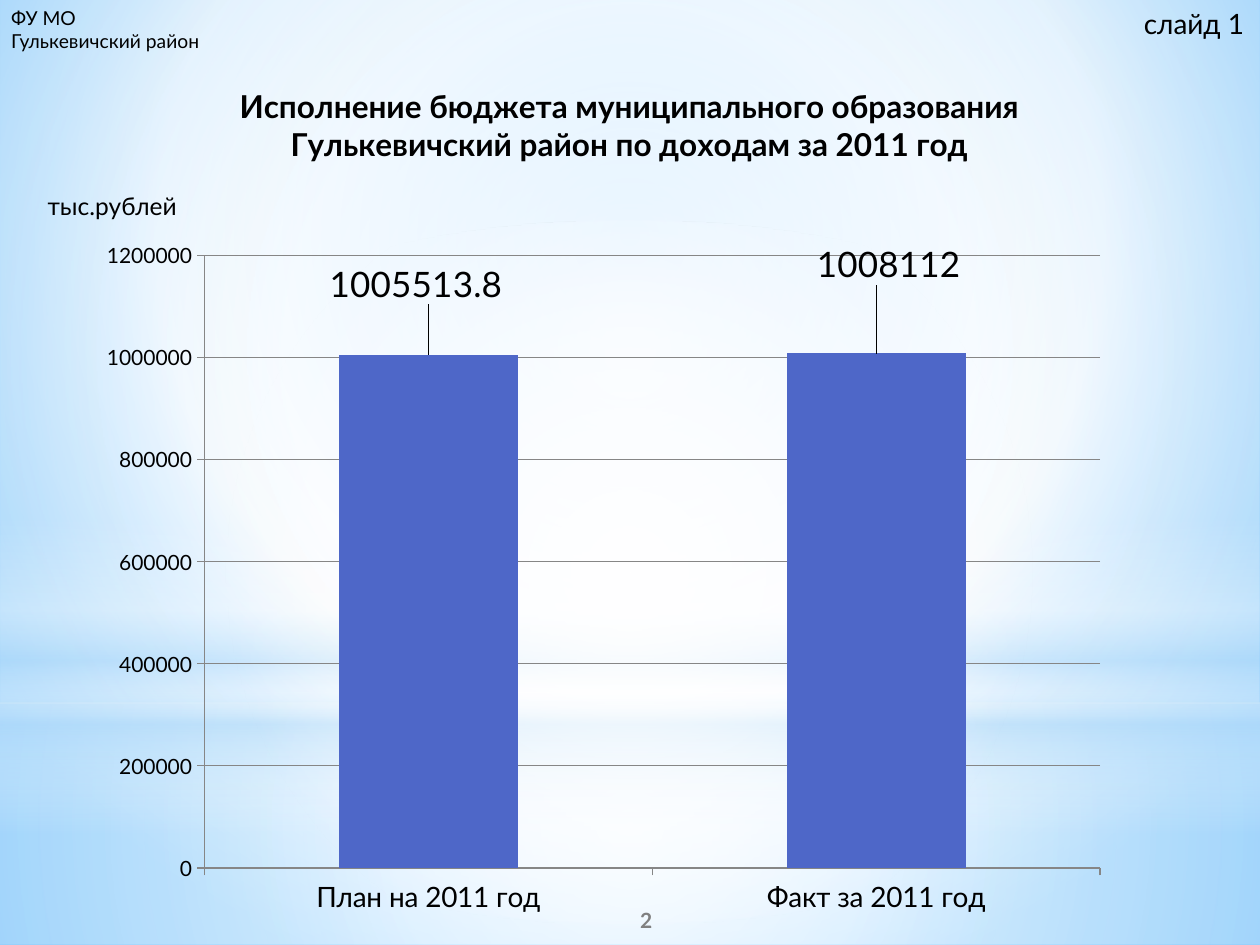
import pptx
import pptx.util
import pptx.oxml
import pptx.oxml.ns
import pptx.dml.color
import pptx.chart.data
import pptx.enum.chart
import pptx.enum.shapes
import pptx.enum.text

Inches = pptx.util.Inches
Pt = pptx.util.Pt
Align = pptx.enum.text.PP_ALIGN
Anchor = pptx.enum.text.MSO_ANCHOR
Kind = pptx.enum.shapes.MSO_SHAPE
qn = pptx.oxml.ns.qn
FONT = "Lato"
GRAY = "868686"
MIDDLE = (50, 50, 50, 50)


def tint(color, code):
    color.rgb = pptx.dml.color.RGBColor.from_string(code)


def style(font, size, code="000000", bold=False):
    font.name = FONT
    font.size = Pt(size)
    font.bold = bold
    tint(font.color, code)


def blend(fill, owner, stops, focus=None):
    fill.gradient()
    marks = "".join(
        f'<a:gs pos="{pos * 1000}"><a:srgbClr val="{code}">'
        f'<a:alpha val="{alpha * 1000}"/></a:srgbClr></a:gs>'
        for pos, code, alpha in stops)
    if focus:
        sides = " ".join(f'{side}="{part * 1000}"' for side, part in zip("ltrb", focus))
        course = f'<a:path path="circle"><a:fillToRect {sides}/></a:path>'
    else:
        course = '<a:lin ang="5400000" scaled="0"/>'
    fresh = pptx.oxml.parse_xml(
        f'<a:gradFill {pptx.oxml.ns.nsdecls("a")} rotWithShape="1">'
        f'<a:gsLst>{marks}</a:gsLst>{course}</a:gradFill>')
    old = owner.find(".//" + qn("a:gradFill"))
    old.getparent().replace(old, fresh)


def add_glow(slide, kind, top, height, stops, focus=None):
    shape = slide.shapes.add_shape(kind, 0, Inches(top), Inches(10), Inches(height))
    shape.shadow.inherit = False
    shape.line.fill.background()
    blend(shape.fill, shape.element, stops, focus)


def add_text(slide, box, text, size, code="000000", bold=False, wrap=False,
             align=Align.LEFT, anchor=Anchor.TOP):
    frame = slide.shapes.add_textbox(*map(Inches, box)).text_frame
    frame.word_wrap = wrap
    frame.vertical_anchor = anchor
    para = frame.paragraphs[0]
    para.text = text
    para.alignment = align
    style(para.font, size, code, bold)


def make_layout(**parts):
    body = "".join(f'<c:{name} val="{value}"/>' for name, value in parts.items())
    return pptx.oxml.parse_xml(
        f'<c:layout {pptx.oxml.ns.nsdecls("c")}><c:manualLayout>{body}'
        '</c:manualLayout></c:layout>')


def set_title(chart):
    para = chart.chart_title.text_frame.paragraphs[0]
    para.add_run().text = "Исполнение бюджета муниципального образования"
    para.add_line_break()
    para.add_run().text = "Гулькевичский район по доходам за 2011 год"
    for run in para.runs:
        style(run.font, 18, bold=True)
    style(para.font, 18, bold=True)
    title = chart.chart_title._element
    for old in title.findall(qn("c:layout")):
        title.remove(old)
    title.find(qn("c:tx")).addnext(
        make_layout(xMode="edge", yMode="edge", x=0.19, y=0.04))
    chart.chart_title.include_in_layout = False


def set_axis(axis, size):
    style(axis.tick_labels.font, size)
    axis.major_tick_mark = pptx.enum.chart.XL_TICK_MARK.OUTSIDE
    axis.format.line.width = Pt(0.75)
    tint(axis.format.line.color, GRAY)


def set_label(point, left, top):
    label = point.data_label
    style(label.font, 20)
    label.position = pptx.enum.chart.XL_LABEL_POSITION.OUTSIDE_END
    tag = label._get_or_add_dLbl()
    tag.find(qn("c:idx")).addnext(make_layout(x=left, y=top))


def add_chart(slide):
    data = pptx.chart.data.CategoryChartData()
    data.categories = ["План на 2011 год", "Факт за 2011 год"]
    data.add_series("Series 1", [1005513.8, 1008112])
    chart = slide.shapes.add_chart(
        pptx.enum.chart.XL_CHART_TYPE.COLUMN_CLUSTERED,
        Inches(-0.01), Inches(0.36), Inches(9.9), Inches(7.09), data).chart
    style(chart.font, 18)
    chart.has_legend = False
    set_title(chart)
    set_axis(chart.category_axis, 16)
    scale = chart.value_axis
    set_axis(scale, 12)
    scale.minimum_scale = 0
    scale.maximum_scale = 1200000
    scale.major_unit = 200000
    scale.has_major_gridlines = True
    grid = scale.major_gridlines.format.line
    grid.width = Pt(0.75)
    tint(grid.color, GRAY)
    plot = chart.plots[0]
    plot.gap_width = 150
    plot.vary_by_categories = False
    bars = plot.series[0]
    bars.format.fill.solid()
    tint(bars.format.fill.fore_color, "4E67C8")
    for index, shift in enumerate([(-0.01, -0.05), (0.01, -0.07)]):
        set_label(bars.points[index], *shift)
    area = chart._chartSpace.find(".//" + qn("c:plotArea"))
    for old in area.findall(qn("c:layout")):
        area.remove(old)
    area.insert(0, make_layout(layoutTarget="inner", xMode="edge", yMode="edge",
                               x=0.165, y=0.235, w=0.718, h=0.686))


def main():
    deck = pptx.Presentation()
    deck.slide_width, deck.slide_height = Inches(10), Inches(7.5)
    slide = deck.slides.add_slide(deck.slide_layouts[6])
    blend(slide.background.fill, slide.element,
          [(0, "9ED5FF", 100), (60, "FFFFFF", 100), (100, "5BB9FF", 100)],
          (20, 10, 20, 60))
    add_glow(slide, Kind.RECTANGLE, 5.58, 1.92,
             [(0, "FFFFFF", 91), (37, "FFFFFF", 76), (100, "B4DCFA", 79)], MIDDLE)
    add_glow(slide, Kind.RECTANGLE, 0, 5.58,
             [(0, "FFFFFF", 89), (48, "FFFFFF", 62), (100, "B4DCFA", 79)], MIDDLE)
    add_glow(slide, Kind.RECTANGLE, 4.12, 2.5,
             [(0, "FFFFFF", 0), (29, "FFFFFF", 30), (45, "B4DCFA", 40),
              (55, "FFFFFF", 26), (65, "B4DCFA", 60), (100, "FFFFFF", 0)])
    add_glow(slide, Kind.OVAL, 1.75, 5.58,
             [(0, "FFFFFF", 100), (56, "FFFFFF", 0)], MIDDLE)
    add_text(slide, (-0.01, 0, 1.73, 0.24), "ФУ МО Гулькевичский район", 11)
    add_chart(slide)
    add_text(slide, (8.98, 0, 1.02, 0.37), "слайд 1", 16)
    add_text(slide, (0.28, 1.47, 1.24, 0.34), "тыс.рублей", 14)
    add_text(slide, (4.13, 7.1, 2, 0.4), "2", 12, "808080", True, True,
             Align.CENTER, Anchor.MIDDLE)
    deck.save("out.pptx")


if __name__ == "__main__":
    main()
